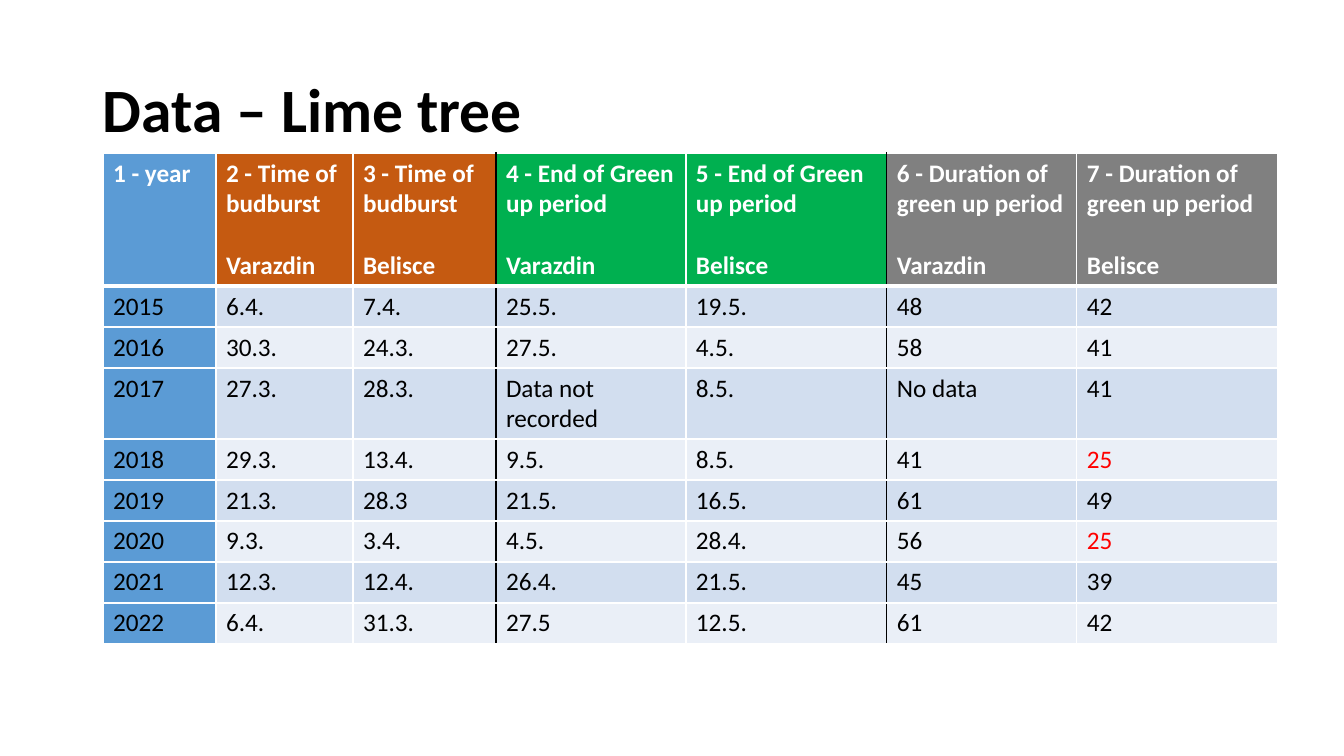
from lxml.etree import SubElement
from pptx import Presentation
from pptx.dml.color import RGBColor
from pptx.enum.text import MSO_ANCHOR
from pptx.oxml.ns import qn
from pptx.util import Emu, Pt

COLORS = {
    "white": "FFFFFF", "black": "000000", "red": "FF0000", "blue": "5B9BD5",
    "orange": "C55A11", "green": "00B050", "gray": "808080",
    "dark_band": "D2DEEF", "light_band": "EAEFF7",
}
HEADERS = [
    ("1 - year", None, "blue"),
    ("2 - Time of budburst", "Varazdin", "orange"),
    ("3 - Time of budburst", "Belisce", "orange"),
    ("4 - End of Green up period", "Varazdin", "green"),
    ("5 - End of Green up period", "Belisce", "green"),
    ("6 - Duration of green up period", "Varazdin", "gray"),
    ("7 - Duration of green up period", "Belisce", "gray"),
]
RECORDS = [
    ("2015", "6.4.", "7.4.", "25.5.", "19.5.", "48", "42"),
    ("2016", "30.3.", "24.3.", "27.5.", "4.5.", "58", "41"),
    ("2017", "27.3.", "28.3.", "Data not recorded", "8.5.", "No data", "41"),
    ("2018", "29.3.", "13.4.", "9.5.", "8.5.", "41", "25"),
    ("2019", "21.3.", "28.3", "21.5.", "16.5.", "61", "49"),
    ("2020", "9.3.", "3.4.", "4.5.", "28.4.", "56", "25"),
    ("2021", "12.3.", "12.4.", "26.4.", "21.5.", "45", "39"),
    ("2022", "6.4.", "31.3.", "27.5", "12.5.", "61", "42"),
]
COLUMN_WIDTHS = [113, 137, 143, 190, 201, 190, 201]
ROW_HEIGHTS = [133, 41, 41, 71, 41, 41, 41, 41, 41]
GROUP_EDGES = (3, 5)
UNUSUAL_DURATION = "25"


def px(length):
    """Turn pixels into EMU."""
    return Emu(round(length * 914400 / 100.8))


class SlideBuilder:
    """Hold the text style and the current slide."""

    def __init__(self, slide, font="Calibri"):
        """Keep the slide and its font."""
        self.slide = slide
        self.font = font

    def style(self, para, size, color, bold=False):
        """Format every run of a paragraph."""
        for span in para.runs:
            span.font.name = self.font
            span.font.size = Pt(size)
            span.font.bold = bold
            span.font.color.rgb = RGBColor.from_string(COLORS[color])

    def title(self, text, left, top, width, height):
        """Add the slide title."""
        box = self.slide.shapes.add_textbox(px(left), px(top), px(width), px(height))
        frame = box.text_frame
        frame.word_wrap = True
        frame.vertical_anchor = MSO_ANCHOR.MIDDLE
        frame.text = text
        frame.paragraphs[0].line_spacing = 0.9
        self.style(frame.paragraphs[0], 44, "black", bold=True)

    def borders(self, cell, row, column):
        """Draw the four edges of a cell."""
        edges = {
            "a:lnL": (1, "black" if column in GROUP_EDGES else "white"),
            "a:lnR": (1, "black" if column + 1 in GROUP_EDGES else "white"),
            "a:lnT": (3 if row == 1 else 1, "white"),
            "a:lnB": (3 if row == 0 else 1, "white"),
        }
        properties = cell._tc.get_or_add_tcPr()
        for tag, (width, color) in edges.items():
            line = SubElement(properties, qn(tag), w=str(Pt(width)))
            fill = SubElement(line, qn("a:solidFill"))
            SubElement(fill, qn("a:srgbClr"), val=COLORS[color])

    def cell(self, cell, row, column, text, fill, color="black", bold=False):
        """Fill one table cell."""
        self.borders(cell, row, column)
        cell.fill.solid()
        cell.fill.fore_color.rgb = RGBColor.from_string(COLORS[fill])
        cell.text_frame.text = text
        self.style(cell.text_frame.paragraphs[0], 18, color, bold)

    def table(self, left, top):
        """Add the table of budburst records."""
        frame = self.slide.shapes.add_table(
            len(ROW_HEIGHTS), len(COLUMN_WIDTHS), px(left), px(top),
            px(sum(COLUMN_WIDTHS)), px(sum(ROW_HEIGHTS)))
        table = frame.table
        table.first_row = table.horz_banding = False
        for column, width in zip(table.columns, COLUMN_WIDTHS):
            column.width = px(width)
        for row, height in zip(table.rows, ROW_HEIGHTS):
            row.height = px(height)
        for column, (label, town, fill) in enumerate(HEADERS):
            header = table.cell(0, column)
            self.cell(header, 0, column, label, fill, "white", bold=True)
            if town:
                para = header.text_frame.add_paragraph()
                para.text = town
                para.space_before = Pt(22)
                self.style(para, 18, "white", bold=True)
        for row, record in enumerate(RECORDS, start=1):
            band = "dark_band" if row % 2 else "light_band"
            for column, text in enumerate(record):
                fill = "blue" if column == 0 else band
                color = "red" if text == UNUSUAL_DURATION else "black"
                self.cell(table.cell(row, column), row, column, text, fill, color)


def main():
    """Build and save the slide."""
    deck = Presentation()
    deck.slide_width, deck.slide_height = px(1344), px(756)
    page = SlideBuilder(deck.slides.add_slide(deck.slide_layouts[6]))
    page.title("Data – Lime tree", 93, 40, 1159, 146)
    page.table(103, 153)
    deck.save("out.pptx")


if __name__ == "__main__":
    main()
